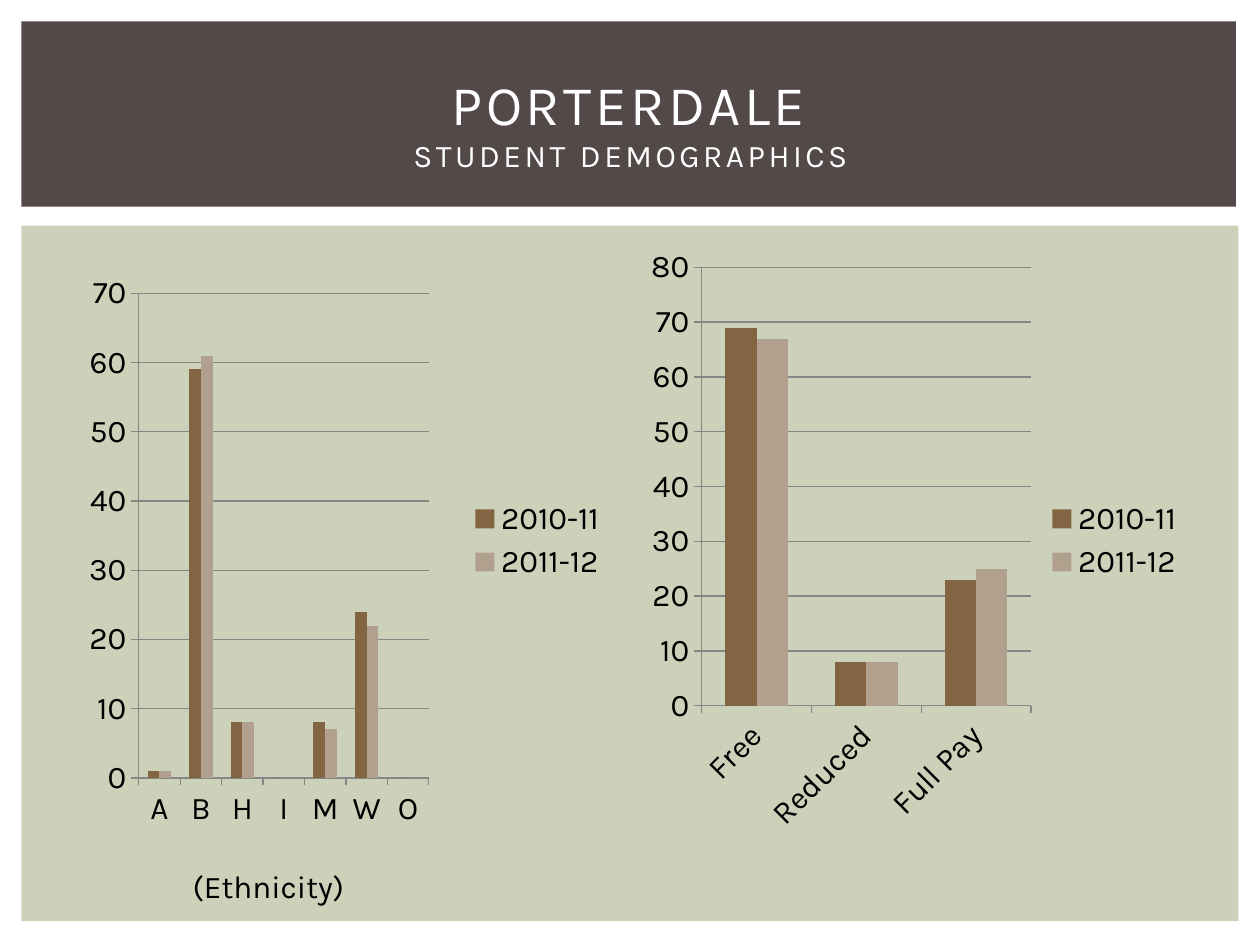
from lxml import etree
from pptx import Presentation
from pptx.chart.data import CategoryChartData
from pptx.dml.color import RGBColor
from pptx.enum.chart import XL_CHART_TYPE, XL_LEGEND_POSITION, XL_TICK_MARK
from pptx.enum.shapes import MSO_SHAPE
from pptx.enum.text import MSO_ANCHOR, PP_ALIGN
from pptx.oxml.ns import qn
from pptx.util import Inches, Pt

COLUMNS = XL_CHART_TYPE.COLUMN_CLUSTERED
LEGEND_RIGHT = XL_LEGEND_POSITION.RIGHT
TICK_OUTSIDE = XL_TICK_MARK.OUTSIDE
RECTANGLE = MSO_SHAPE.RECTANGLE
MIDDLE, TOP = MSO_ANCHOR.MIDDLE, MSO_ANCHOR.TOP
CENTER = PP_ALIGN.CENTER

WHITE = RGBColor(0xFF, 0xFF, 0xFF)
BLACK = RGBColor(0x00, 0x00, 0x00)
SAGE = RGBColor(0xCC, 0xD1, 0xB9)
DARK_BROWN = RGBColor(0x53, 0x49, 0x49)
AXIS_GRAY = RGBColor(0x86, 0x86, 0x86)
SERIES_COLORS = (RGBColor(0x83, 0x65, 0x43), RGBColor(0xB2, 0xA0, 0x8F))

FONT = "Karla"
YEARS = ("2010-11", "2011-12")


def add_panel(slide, box, color):
    panel = slide.shapes.add_shape(RECTANGLE, *map(Inches, box))
    panel.shadow.inherit = False
    panel.fill.solid()
    panel.fill.fore_color.rgb = color
    panel.line.fill.background()


def add_text(slide, box, lines, color, anchor=TOP, spacing=0):
    """Place centred lines, given as (text, size), in one paragraph."""
    frame = slide.shapes.add_textbox(*map(Inches, box)).text_frame
    frame.word_wrap = True
    frame.vertical_anchor = anchor
    paragraph = frame.paragraphs[0]
    paragraph.alignment = CENTER
    for index, (text, size) in enumerate(lines):
        if index:
            paragraph.add_line_break()
        run = paragraph.add_run()
        run.text = text
        run.font.name = FONT
        run.font.size = Pt(size)
        run.font.color.rgb = color
        if spacing:
            run.font._element.set("spc", str(spacing * 100))


def set_plot_layout(chart, layout):
    """Fix the inner plot area as fractions of the chart."""
    plot_area = chart._chartSpace.chart.plotArea
    for old in plot_area.findall(qn("c:layout")):
        plot_area.remove(old)
    element = etree.Element(qn("c:layout"))
    manual = etree.SubElement(element, qn("c:manualLayout"))
    settings = [("layoutTarget", "inner"), ("xMode", "edge"), ("yMode", "edge")]
    settings += zip("xywh", layout)
    for name, value in settings:
        etree.SubElement(manual, qn("c:" + name)).set("val", str(value))
    plot_area.insert(0, element)


def add_column_chart(slide, box, categories, values, maximum, layout=None):
    data = CategoryChartData()
    data.categories = categories
    for year, numbers in zip(YEARS, values):
        data.add_series(year, numbers)
    chart = slide.shapes.add_chart(COLUMNS, *map(Inches, box), data).chart
    chart.has_title = False
    chart.font.name = FONT
    chart.font.size = Pt(18)
    chart.font.color.rgb = BLACK

    # Legend
    chart.has_legend = True
    chart.legend.position = LEGEND_RIGHT
    chart.legend.include_in_layout = False

    # Columns
    plot = chart.plots[0]
    plot.gap_width = 150
    plot.vary_by_categories = False
    for series, color in zip(plot.series, SERIES_COLORS):
        series.format.fill.solid()
        series.format.fill.fore_color.rgb = color

    # Axes and gridlines
    value_axis = chart.value_axis
    value_axis.minimum_scale = 0
    value_axis.maximum_scale = maximum
    value_axis.major_unit = 10
    value_axis.has_major_gridlines = True
    value_axis.major_gridlines.format.line.color.rgb = AXIS_GRAY
    for axis in (chart.category_axis, value_axis):
        axis.major_tick_mark = TICK_OUTSIDE
        axis.format.line.color.rgb = AXIS_GRAY
    if layout:
        set_plot_layout(chart, layout)


def add_header(slide, box):
    add_panel(slide, box, DARK_BROWN)
    left, top, width, _ = box
    add_text(slide, (left + 0.25, top + 0.22, width - 0.47, 1.15),
             [("PORTERDALE", 32), ("STUDENT DEMOGRAPHICS", 18)],
             WHITE, MIDDLE, spacing=2)


def add_demographics(slide, box):
    add_panel(slide, box, SAGE)
    left, top, width, _ = box
    chart_width, chart_height, margin = 4.42, 4.82, 0.33
    chart_top = top + 0.09

    # Ethnicity
    add_column_chart(slide, (left + margin, chart_top, chart_width, chart_height),
                     list("ABHIMWO"),
                     [(1, 59, 8, 0, 8, 24, 0), (1, 61, 8, 0, 7, 22, 0)],
                     70, (0.136, 0.093, 0.521, 0.798))
    add_text(slide, (left + 0.5, top + 5.04, 2.92, 0.4), [("(Ethnicity)", 18)], BLACK)

    # Meal status
    right_chart_left = left + width - margin - chart_width
    add_column_chart(slide, (right_chart_left, chart_top, chart_width, chart_height),
                     ["Free", "Reduced", "Full Pay"],
                     [(69, 8, 23), (67, 8, 25)], 80)


def main():
    presentation = Presentation()
    presentation.slide_width = Inches(10)
    presentation.slide_height = Inches(7.5)
    slide = presentation.slides.add_slide(presentation.slide_layouts[6])
    slide.background.fill.solid()
    slide.background.fill.fore_color.rgb = WHITE
    add_demographics(slide, (0.17, 1.79, 9.66, 5.52))
    add_header(slide, (0.17, 0.17, 9.64, 1.47))
    presentation.save("out.pptx")


if __name__ == "__main__":
    main()
